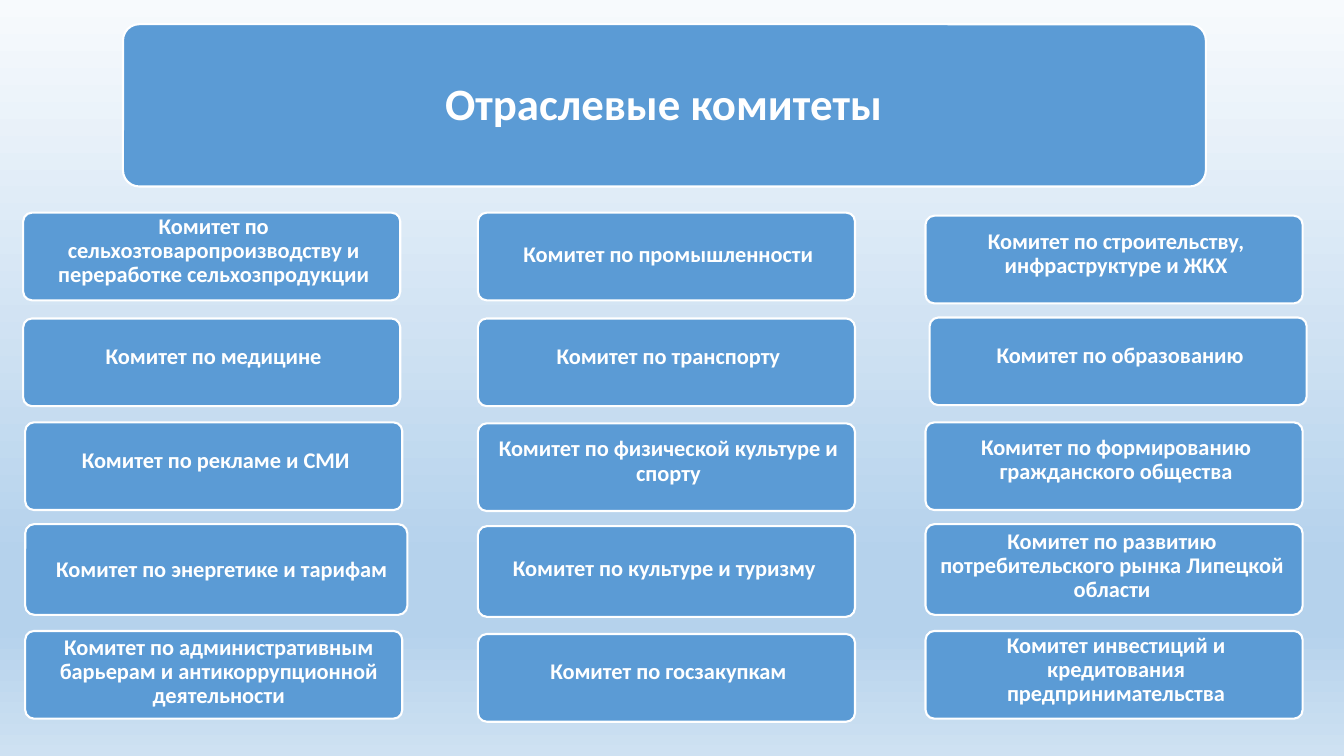
from lxml.etree import SubElement
from pptx import Presentation
from pptx.dml.color import RGBColor
from pptx.enum.shapes import MSO_SHAPE as Preset
from pptx.enum.text import MSO_ANCHOR as Anchor, PP_ALIGN as Align
from pptx.oxml.ns import qn
from pptx.util import Inches, Pt

HEADING = "Отраслевые комитеты"
COMMITTEES = [
    ["Комитет по сельхозтоваропроизводству и переработке сельхозпродукции",
     "Комитет по промышленности",
     "Комитет по строительству, инфраструктуре и ЖКХ"],
    ["Комитет по медицине", "Комитет по транспорту", "Комитет по образованию"],
    ["Комитет по рекламе и СМИ",
     "Комитет по физической культуре и спорту",
     "Комитет по формированию гражданского общества"],
    ["Комитет по энергетике и тарифам",
     "Комитет по культуре и туризму",
     "Комитет по развитию потребительского рынка Липецкой области"],
    ["Комитет по административным барьерам и антикоррупционной деятельности",
     "Комитет по госзакупкам",
     "Комитет инвестиций и кредитования предпринимательства"],
]
COLUMN_LEFTS = [0.23, 4.74, 9.18]
ROW_TOPS = [2.11, 3.16, 4.19, 5.2, 6.26]
ROW_HEIGHTS = [0.87, 0.87, 0.87, 0.9, 0.87]
CARD_WIDTH = 3.74
LABEL_SHIFT = (0.04, -0.03)

# (row, column): small moves of a card off the grid
CARD_NUDGES = {
    (0, 2): (0, 0.03), (1, 2): (0.04, -0.01), (2, 0): (0.02, 0),
    (2, 1): (0, 0.01), (3, 0): (0.02, 0), (3, 1): (0, 0.02),
    (4, 0): (0.02, 0), (4, 1): (0, 0.03),
}
# (row, column): label position relative to its card
LABEL_SHIFTS = {
    (0, 1): (0.04, 0.01), (2, 0): (0.04, -0.02), (3, 0): (0, 0.03),
    (3, 1): (0, 0), (3, 2): (0, -0.01), (4, 0): (0.07, 0),
    (4, 2): (0.04, -0.02),
}
CARD_WIDTHS = {(3, 0): 3.79}
LABEL_WIDTHS = {(3, 0): 3.9}

BLUE, WHITE = "5B9BD5", "FFFFFF"
SKY = [(0, "F7FAFD"), (74, "B5D2EC"), (83, "B5D2EC"), (100, "CEE1F2")]


def color(hex_value):
    return RGBColor.from_string(hex_value)


def paint_sky(slide):
    fill = slide.background.fill
    fill.gradient()
    fill.gradient_angle = 270
    stops = next(slide.background._cSld.iter(qn("a:gsLst")))
    for stop in list(stops):
        stops.remove(stop)
    for percent, shade in SKY:
        stop = SubElement(stops, qn("a:gs"), pos=str(percent * 1000))
        SubElement(stop, qn("a:srgbClr"), val=shade)


def add_card(slide, text, size, card_box, label_box):
    """Group a rounded card with its label; boxes are left, top, width, height."""
    group = slide.shapes.add_group_shape()
    card = group.shapes.add_shape(Preset.ROUNDED_RECTANGLE, *map(Inches, card_box))
    card.adjustments[0] = 0.1
    card.shadow.inherit = False
    card.fill.solid()
    card.fill.fore_color.rgb = color(BLUE)
    card.line.color.rgb = color(WHITE)
    card.line.width = Pt(1.5)

    frame = group.shapes.add_textbox(*map(Inches, label_box)).text_frame
    frame.word_wrap = True
    frame.vertical_anchor = Anchor.MIDDLE
    frame.margin_left = frame.margin_right = Inches(0.07)
    frame.margin_top = frame.margin_bottom = Inches(0.07)
    frame.text = text
    label = frame.paragraphs[0]
    label.alignment = Align.CENTER
    label.line_spacing = 0.9
    after = SubElement(label._p.get_or_add_pPr(), qn("a:spcAft"))
    SubElement(after, qn("a:spcPct"), val="35000")
    font = label.runs[0].font
    font.name, font.size, font.bold = "Calibri", Pt(size), True
    font.color.rgb = color(WHITE)


def main():
    deck = Presentation()
    deck.slide_width, deck.slide_height = Inches(13.33), Inches(7.5)
    slide = deck.slides.add_slide(deck.slide_layouts[6])
    paint_sky(slide)
    add_card(slide, HEADING, 32, (1.22, 0.24, 10.74, 1.61), (1.27, 0.29, 10.63, 1.52))

    for row, names in enumerate(COMMITTEES):
        height = ROW_HEIGHTS[row]
        for column, name in enumerate(names):
            cell = row, column
            nudge_x, nudge_y = CARD_NUDGES.get(cell, (0, 0))
            shift_x, shift_y = LABEL_SHIFTS.get(cell, LABEL_SHIFT)
            left = COLUMN_LEFTS[column] + nudge_x
            top = ROW_TOPS[row] + nudge_y
            width = CARD_WIDTHS.get(cell, CARD_WIDTH)
            label_width = LABEL_WIDTHS.get(cell, width - 0.04)
            add_card(slide, name, 16, (left, top, width, height),
                     (left + shift_x, top + shift_y, label_width, height - 0.05))

    deck.save("out.pptx")


if __name__ == "__main__":
    main()
